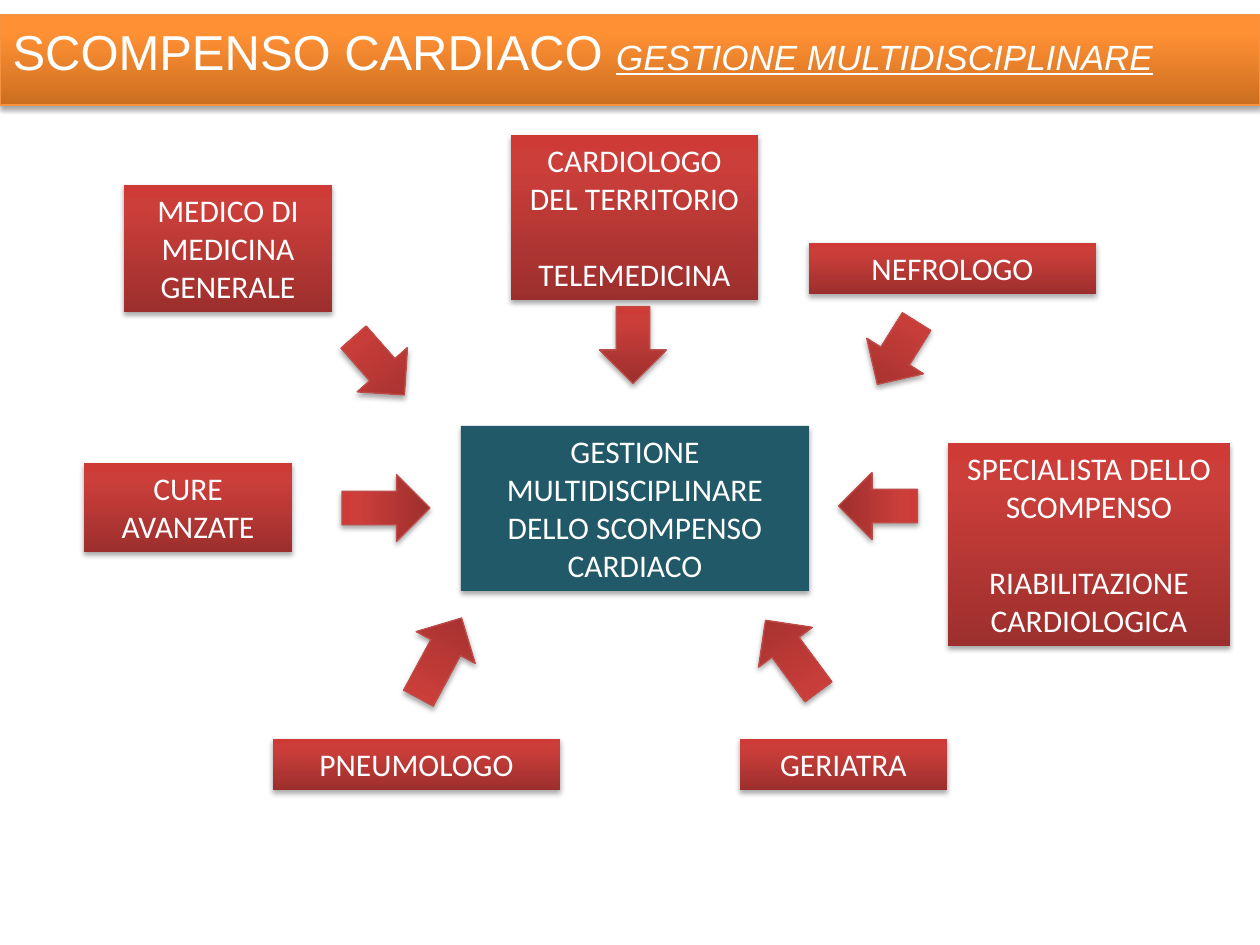
import pptx
import pptx.dml.color
import pptx.enum.shapes
import pptx.enum.text
import pptx.oxml
import pptx.oxml.ns
import pptx.util

EMU_PER_PX = 914400 / 126
ORANGE = [(0, "CC6E20"), (80, "FF9034"), (100, "FF9136")]
RED = [(0, "9C2F2D"), (80, "CB3E3A"), (100, "CE3B37")]
TEAL = "215968"
WHITE = "FFFFFF"
ARROW_WIDTH = 67

# left, top, width, height, paragraphs
SPECIALISTS = [
    (124, 185, 208, 127, ["MEDICO DI MEDICINA GENERALE"]),
    (511, 135, 247, 165, ["CARDIOLOGO DEL TERRITORIO", "TELEMEDICINA"]),
    (809, 243, 287, 51, ["NEFROLOGO"]),
    (948, 443, 282, 203, ["SPECIALISTA DELLO SCOMPENSO", "RIABILITAZIONE CARDIOLOGICA"]),
    (740, 739, 207, 51, ["GERIATRA"]),
    (273, 739, 287, 51, ["PNEUMOLOGO"]),
    (84, 463, 208, 89, ["CURE AVANZATE"]),
]

# centre x, centre y, length, rotation
ARROWS = [
    (633, 345, 77, 0),
    (897, 353, 74, 32),
    (878, 506, 79, 90),
    (792, 656, 89, 143.5),
    (440, 658, 91, 208.3),
    (386, 508, 88, 270),
    (379, 366, 77, 318.7),
]


def px(length):
    return pptx.util.Emu(round(length * EMU_PER_PX))


def color(value):
    return pptx.dml.color.RGBColor.from_string(value)


def set_line(shape, value=None):
    if value is None:
        shape.line.fill.background()
    else:
        shape.line.color.rgb = color(value)
        shape.line.width = pptx.util.Pt(0.75)


def fill_gradient(shape, stops):
    """Fill from bottom to top with the given (percent, colour) stops."""
    shape.fill.gradient()
    shape.fill.gradient_angle = 90
    stop_list = shape._element.spPr.find(
        f"{pptx.oxml.ns.qn('a:gradFill')}/{pptx.oxml.ns.qn('a:gsLst')}")
    for stop in list(stop_list):
        stop_list.remove(stop)
    for percent, value in stops:
        stop_list.append(pptx.oxml.parse_xml(
            f'<a:gs {pptx.oxml.ns.nsdecls("a")} pos="{percent * 1000}">'
            f'<a:srgbClr val="{value}"/></a:gs>'))


def add_shadow(shape):
    shape.shadow.inherit = False
    effects = shape._element.spPr.find(pptx.oxml.ns.qn("a:effectLst"))
    effects.append(pptx.oxml.parse_xml(
        f'<a:outerShdw {pptx.oxml.ns.nsdecls("a")} blurRad="{pptx.util.Pt(3.1)}"'
        f' dist="{pptx.util.Pt(1.8)}" dir="5400000" rotWithShape="0">'
        '<a:srgbClr val="000000"><a:alpha val="35000"/></a:srgbClr></a:outerShdw>'))


def add_title(slide, left, top, width, height):
    title = slide.shapes.title
    title.left, title.top = px(left), px(top)
    title.width, title.height = px(width), px(height)
    fill_gradient(title, ORANGE)
    set_line(title, "F69240")
    add_shadow(title)

    frame = title.text_frame
    frame.auto_size = pptx.enum.text.MSO_AUTO_SIZE.NONE
    frame.vertical_anchor = pptx.enum.text.MSO_ANCHOR.TOP
    paragraph = frame.paragraphs[0]
    paragraph.alignment = pptx.enum.text.PP_ALIGN.LEFT
    paragraph.font.name = "Arial"
    paragraph.font.color.rgb = color(WHITE)
    topic = paragraph.add_run()
    topic.text = "SCOMPENSO CARDIACO "
    topic.font.size = pptx.util.Pt(28)
    subtitle = paragraph.add_run()
    subtitle.text = "GESTIONE MULTIDISCIPLINARE"
    subtitle.font.size = pptx.util.Pt(20)
    subtitle.font.italic = True
    subtitle.font.underline = True


def add_box(slide, left, top, width, height, texts, solid=None):
    box = slide.shapes.add_shape(
        pptx.enum.shapes.MSO_SHAPE.RECTANGLE, px(left), px(top), px(width), px(height))
    if solid:
        box.fill.solid()
        box.fill.fore_color.rgb = color(solid)
    else:
        fill_gradient(box, RED)
    set_line(box)
    add_shadow(box)

    frame = box.text_frame
    frame.word_wrap = True
    frame.vertical_anchor = pptx.enum.text.MSO_ANCHOR.TOP
    for index, text in enumerate(texts):
        paragraph = frame.add_paragraph() if index else frame.paragraphs[0]
        paragraph.text = text
        paragraph.alignment = pptx.enum.text.PP_ALIGN.CENTER
        if index:
            paragraph.space_before = pptx.util.Pt(22)
        paragraph.font.name = "Calibri"
        paragraph.font.size = pptx.util.Pt(18)
        paragraph.font.color.rgb = color(WHITE)


def add_arrow(slide, center_x, center_y, length, rotation):
    arrow = slide.shapes.add_shape(
        pptx.enum.shapes.MSO_SHAPE.DOWN_ARROW,
        px(center_x - ARROW_WIDTH / 2), px(center_y - length / 2),
        px(ARROW_WIDTH), px(length))
    arrow.rotation = rotation
    fill_gradient(arrow, RED)
    set_line(arrow, "BF4C48")
    add_shadow(arrow)


def main():
    presentation = pptx.Presentation()
    presentation.slide_width = px(1260)
    presentation.slide_height = px(945)
    slide = presentation.slides.add_slide(presentation.slide_layouts[5])

    add_title(slide, 0, 15, 1260, 90)
    # Shared care in the centre, specialists around it
    add_box(slide, 461, 426, 348, 165,
            ["GESTIONE MULTIDISCIPLINARE DELLO SCOMPENSO CARDIACO"], solid=TEAL)
    for specialist in SPECIALISTS:
        add_box(slide, *specialist)
    for arrow in ARROWS:
        add_arrow(slide, *arrow)

    presentation.save("out.pptx")


if __name__ == "__main__":
    main()
